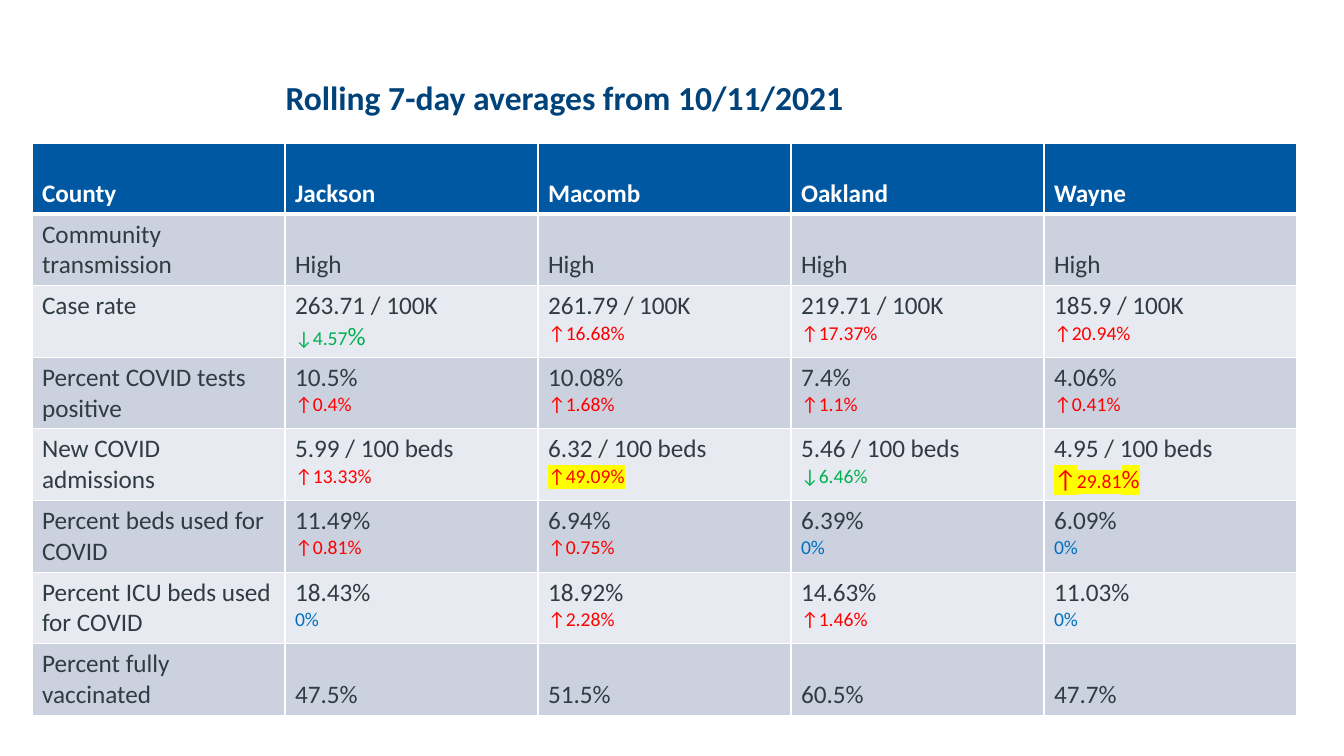
from dataclasses import dataclass
from itertools import groupby

from lxml.etree import SubElement
from pptx import Presentation
from pptx.dml.color import RGBColor as RGB
from pptx.enum.text import MSO_ANCHOR as Anchor, MSO_AUTO_SIZE as AutoSize, PP_ALIGN as Align
from pptx.oxml import parse_xml
from pptx.oxml.ns import nsdecls, qn
from pptx.util import Pt

EMU_PER_PX = 914400 / 100.8


def px(n: int) -> int:
    return round(n * EMU_PER_PX)


@dataclass(frozen=True)
class Theme:
    font: str = "Calibri"
    title: str = "00427A"
    header: str = "0058A3"
    white: str = "FFFFFF"
    text: str = "303C41"
    bands: tuple[str, str] = ("CCD1E0", "E7EAF0")
    rise: str = "FF0000"
    fall: str = "00B050"
    steady: str = "0070C0"
    highlight: str = "FFFF00"
    title_pt: int = 24
    body_pt: int = 18
    change_pt: int = 14
    border_pt: int = 1
    header_border_pt: int = 3


@dataclass(frozen=True)
class Reading:
    value: str
    change: str = ""
    flagged: bool = False
    large: str = ""


@dataclass(frozen=True)
class Metric:
    label: str
    readings: tuple[Reading, ...]


THEME = Theme()
TITLE = "Rolling 7-day averages from 10/11/2021"
HEADER = Metric("County", tuple(map(Reading, ("Jackson", "Macomb", "Oakland", "Wayne"))))
METRICS = (
    Metric("Community transmission", (Reading("High"),) * 4),
    Metric("Case rate", (
        Reading("263.71 / 100K", "↓4.57%", large="%"),
        Reading("261.79 / 100K", "↑16.68%"),
        Reading("219.71 / 100K", "↑17.37%"),
        Reading("185.9 / 100K", "↑20.94%"))),
    Metric("Percent COVID tests positive", (
        Reading("10.5%", "↑0.4%"),
        Reading("10.08%", "↑1.68%"),
        Reading("7.4%", "↑1.1%"),
        Reading("4.06%", "↑0.41%"))),
    Metric("New COVID admissions", (
        Reading("5.99 / 100 beds", "↑13.33%"),
        Reading("6.32 / 100 beds", "↑49.09%", flagged=True),
        Reading("5.46 / 100 beds", "↓6.46%"),
        Reading("4.95 / 100 beds", "↑29.81%", flagged=True, large="↑%"))),
    Metric("Percent beds used for COVID", (
        Reading("11.49%", "↑0.81%"),
        Reading("6.94%", "↑0.75%"),
        Reading("6.39%", "0%"),
        Reading("6.09%", "0%"))),
    Metric("Percent ICU beds used for COVID", (
        Reading("18.43%", "0%"),
        Reading("18.92%", "↑2.28%"),
        Reading("14.63%", "↑1.46%"),
        Reading("11.03%", "0%"))),
    Metric("Percent fully vaccinated", tuple(map(Reading, ("47.5%", "51.5%", "60.5%", "47.7%")))),
)


def style_run(r, size: int, color: str, bold: bool = False) -> None:
    r.font.name = THEME.font
    r.font.size = Pt(size)
    r.font.bold = bold
    r.font.color.rgb = RGB.from_string(color)


def highlight_run(r) -> None:
    mark = parse_xml(f'<a:highlight {nsdecls("a")}><a:srgbClr val="{THEME.highlight}"/></a:highlight>')
    r.font._element.find(qn("a:solidFill")).addnext(mark)


def set_borders(cell, top: int, bottom: int) -> None:
    props = cell._tc.get_or_add_tcPr()
    widths = {"lnL": THEME.border_pt, "lnR": THEME.border_pt, "lnT": top, "lnB": bottom}
    for i, (side, width) in enumerate(widths.items()):
        line = props.makeelement(qn(f"a:{side}"), {"w": str(Pt(width))})
        fill = SubElement(line, qn("a:solidFill"))
        SubElement(fill, qn("a:srgbClr"), {"val": THEME.white})
        props.insert(i, line)


def add_change(tf, reading: Reading) -> None:
    color = {"↑": THEME.rise, "↓": THEME.fall}.get(reading.change[0], THEME.steady)
    p = tf.add_paragraph()
    for is_large, chars in groupby(reading.change, lambda ch: ch in reading.large):
        r = p.add_run()
        r.text = "".join(chars)
        style_run(r, THEME.body_pt if is_large else THEME.change_pt, color)
        if reading.flagged:
            highlight_run(r)


def fill_row(cells, metric: Metric, row: int) -> None:
    is_header = row == 0
    fill = THEME.header if is_header else THEME.bands[(row - 1) % 2]
    has_changes = any(reading.change for reading in metric.readings)
    top = THEME.header_border_pt if row == 1 else THEME.border_pt
    bottom = THEME.header_border_pt if is_header else THEME.border_pt
    for cell, reading in zip(cells, (Reading(metric.label), *metric.readings)):
        cell.fill.solid()
        cell.fill.fore_color.rgb = RGB.from_string(fill)
        cell.vertical_anchor = Anchor.TOP if has_changes else Anchor.BOTTOM
        set_borders(cell, top, bottom)
        tf = cell.text_frame
        tf.text = reading.value
        style_run(tf.paragraphs[0].runs[0], THEME.body_pt,
                  THEME.white if is_header else THEME.text, is_header)
        if reading.change:
            add_change(tf, reading)


def add_county_table(slide) -> None:
    rows = (HEADER, *METRICS)
    columns = 1 + len(HEADER.readings)
    frame = slide.shapes.add_table(len(rows), columns, px(32), px(143),
                                   px(253 * columns), px(71 * len(rows)))
    table = frame.table
    table.horz_banding = False
    for i, (row, metric) in enumerate(zip(table.rows, rows)):
        fill_row(row.cells, metric, i)


def add_title(slide) -> None:
    tf = slide.shapes.add_textbox(px(95), px(72), px(939), px(50)).text_frame
    tf.word_wrap = True
    tf.auto_size = AutoSize.SHAPE_TO_FIT_TEXT
    tf.text = TITLE
    p = tf.paragraphs[0]
    p.alignment = Align.CENTER
    style_run(p.runs[0], THEME.title_pt, THEME.title, True)


def main() -> None:
    prs = Presentation()
    prs.slide_width, prs.slide_height = px(1344), px(756)
    slide = prs.slides.add_slide(prs.slide_layouts[6])
    add_county_table(slide)
    add_title(slide)
    prs.save("out.pptx")


if __name__ == "__main__":
    main()
